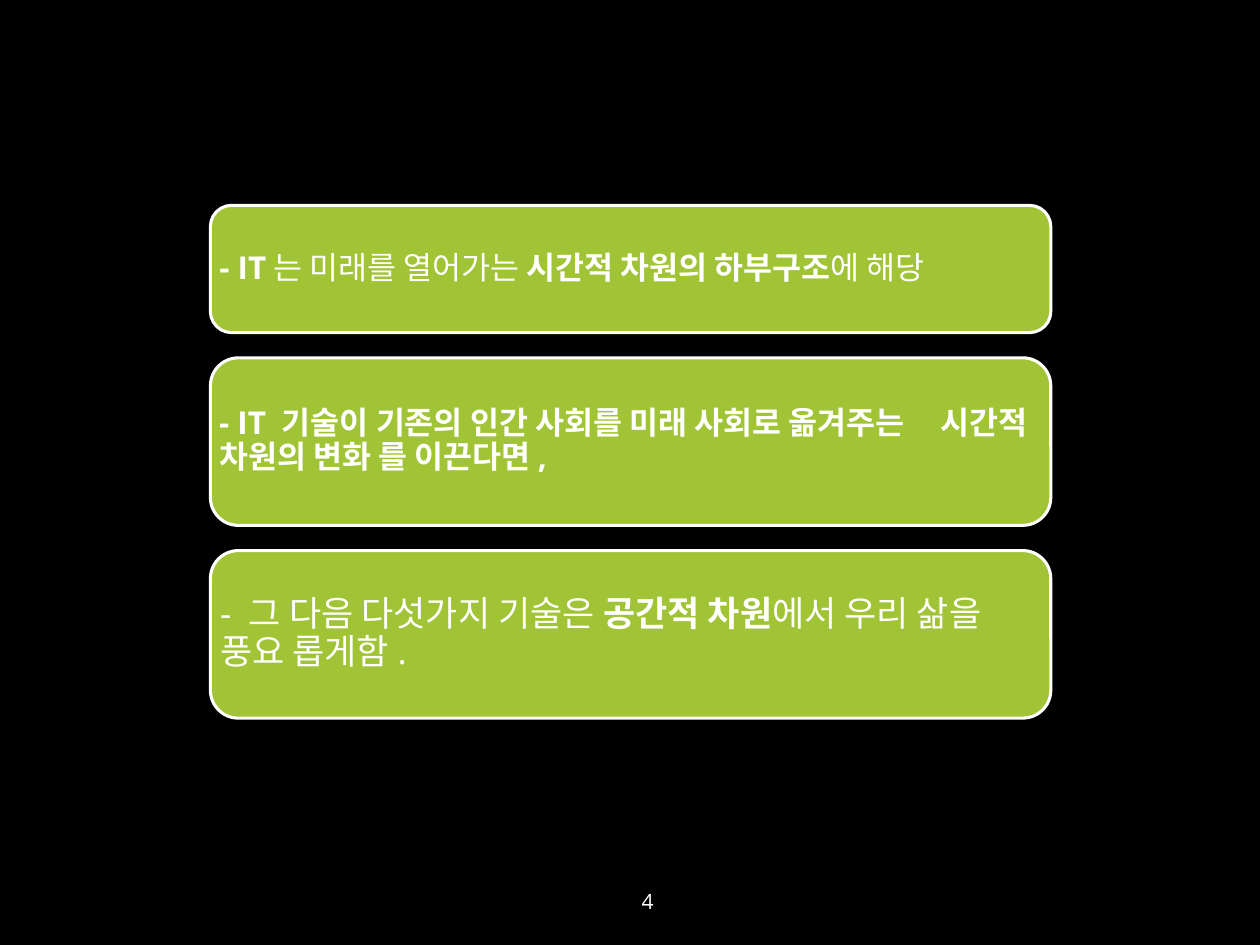
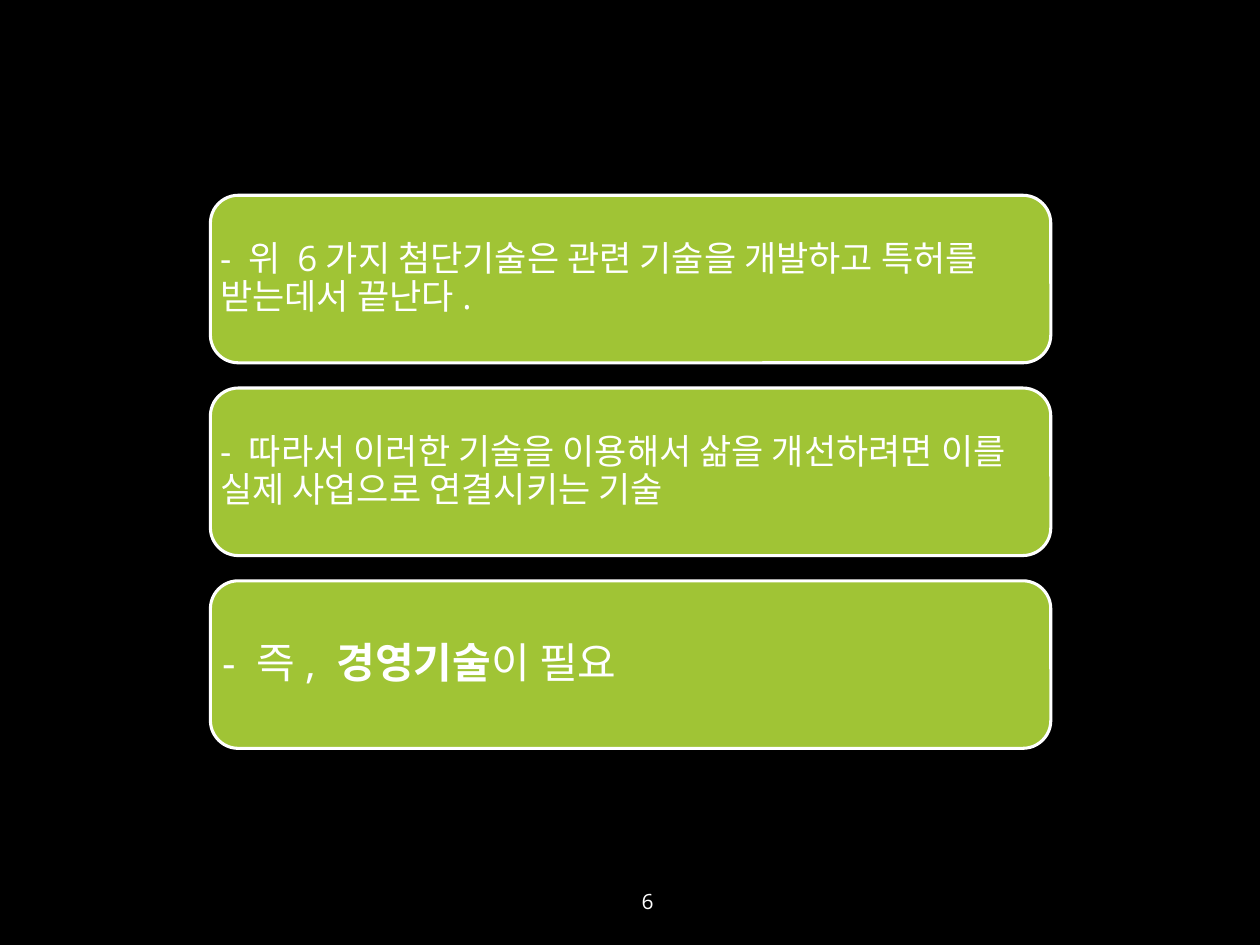
from pptx import Presentation
from pptx import util as u
from pptx.dml.color import RGBColor
from pptx.enum import shapes, text

BLACK = RGBColor(0x00, 0x00, 0x00)
WHITE = RGBColor(0xFF, 0xFF, 0xFF)
GREEN = RGBColor(0xA0, 0xC4, 0x35)

LEFT, WIDTH, GAP = 1.67, 6.67, 0.2
CORNER_INSET = 0.05  # share of the height that round corners take from the text area


class Deck:
    font = {"name": "Open Sans", "bold": False}

    def __init__(self):
        self.prs = Presentation()
        self.prs.slide_width, self.prs.slide_height = u.Inches(10), u.Inches(7.5)
        self.slide = None

    def add_slide(self, number):
        self.slide = self.prs.slides.add_slide(self.prs.slide_layouts[6])
        fill = self.slide.background.fill
        fill.solid()
        fill.fore_color.rgb = BLACK
        self.page_number(number)

    def set_text(self, sp, runs, size, align, margin=None, **paragraph):
        tf = sp.text_frame
        frame = {"word_wrap": True, "vertical_anchor": text.MSO_ANCHOR.MIDDLE}
        if margin is not None:
            sides = ("left", "right", "top", "bottom")
            frame.update({f"margin_{side}": u.Inches(margin) for side in sides})
        for key, value in frame.items():
            setattr(tf, key, value)
        p = tf.paragraphs[0]
        for key, value in {"alignment": align, **paragraph}.items():
            setattr(p, key, value)
        for words, bold in runs:
            r = p.add_run()
            r.text = words
            for key, value in {**self.font, "size": u.Pt(size), "bold": bold}.items():
                setattr(r.font, key, value)
            r.font.color.rgb = WHITE

    def page_number(self, number):
        sp = self.slide.shapes.add_textbox(
            u.Inches(4.53), u.Inches(6.95), u.Inches(1.22), u.Inches(0.4))
        self.set_text(sp, [(str(number), False)], 12, text.PP_ALIGN.CENTER)

    def card(self, top, height, size, runs):
        sp = self.slide.shapes.add_shape(
            shapes.MSO_SHAPE.ROUNDED_RECTANGLE,
            u.Inches(LEFT), u.Inches(top), u.Inches(WIDTH), u.Inches(height))
        sp.shadow.inherit = False
        sp.fill.solid()
        sp.fill.fore_color.rgb = GREEN
        sp.line.color.rgb = WHITE
        sp.line.width = u.Pt(1.75)
        margin = size / 250 - CORNER_INSET * height
        self.set_text(sp, runs, size, text.PP_ALIGN.LEFT, margin, line_spacing=0.9)

    def card_stack(self, top, cards):
        for height, size, runs in cards:
            self.card(top, height, size, runs)
            top += height + GAP


# Page number, top of the stack, cards as (height, text size, runs as (words, bold))
SLIDES = [
    (4, 1.63, [
        (1.01, 18, [("- IT", True), ("는 미래를 열어가는 ", False),
                    ("시간적 차원의 하부구조", True), ("에 해당", False)]),
        (1.33, 18, [("- IT 기술이 기존의 인간 사회를 미래 사회로 옮겨주는     "
                     "시간적 차원의 변화 를 이끈다면,", True)]),
        (1.33, 20, [("- 그 다음 다섯가지 기술은 ", False), ("공간적 차원", True),
                    ("에서 우리 삶을 풍요 롭게함.", False)]),
    ]),
    (6, 1.55, [
        (1.33, 20, [("- 위 6가지 첨단기술은 관련 기술을 개발하고 특허를 "
                     "받는데서 끝난다.", False)]),
        (1.33, 20, [("- 따라서 이러한 기술을 이용해서 삶을 개선하려면 이를 "
                     "실제 사업으로 연결시키는 기술", False)]),
        (1.33, 24, [("- 즉, ", False), ("경영기술", True), ("이 필요", False)]),
    ]),
]


def main():
    deck = Deck()
    for number, top, cards in SLIDES:
        deck.add_slide(number)
        deck.card_stack(top, cards)
    deck.prs.save("out.pptx")


if __name__ == "__main__":
    main()
